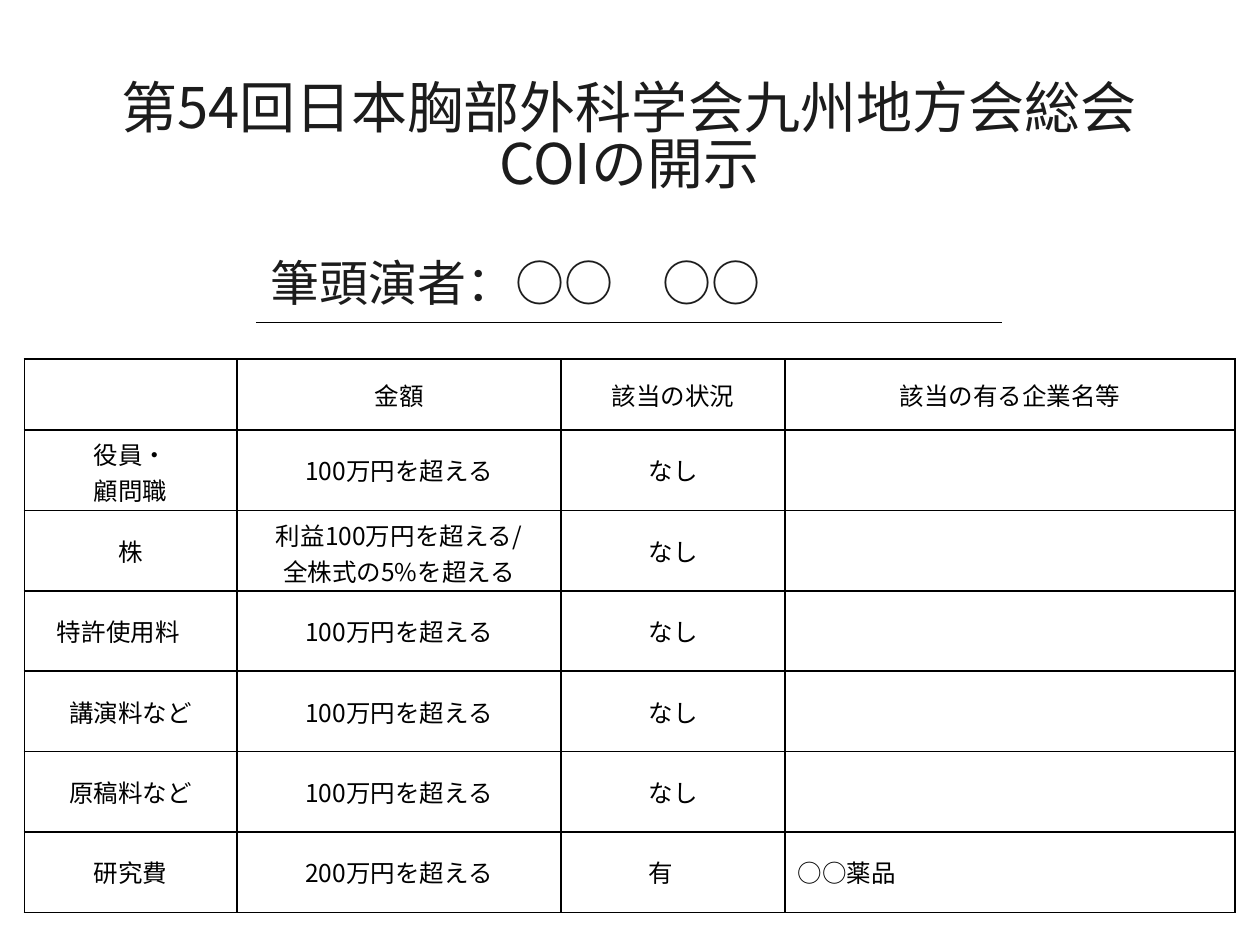
from lxml import etree
from pptx import Presentation
from pptx.dml.color import RGBColor
from pptx.enum.shapes import MSO_CONNECTOR
from pptx.enum.text import MSO_ANCHOR, MSO_AUTO_SIZE, PP_ALIGN
from pptx.oxml.ns import qn
from pptx.util import Cm, Pt

FONT = "Noto Sans CJK JP"
BLACK = RGBColor(0x00, 0x00, 0x00)
INK = RGBColor(0x1C, 0x1C, 0x1C)


def write_text(frame, text, size=14, color=BLACK, align=PP_ALIGN.CENTER, spacing=None, before=0):
    """Fill a text frame: a newline starts a paragraph, a vertical tab breaks a line."""
    frame.text = text
    frame.word_wrap = True
    frame.vertical_anchor = MSO_ANCHOR.MIDDLE
    for paragraph in frame.paragraphs:
        paragraph.alignment = align
        paragraph.space_before = Pt(before)
        if spacing:
            paragraph.line_spacing = spacing
        for run in paragraph.runs:
            run.font.size = Pt(size)
            run.font.name = FONT
            run.font.color.rgb = color
            east_asian = etree.SubElement(run.font._element, qn("a:ea"))
            east_asian.set("typeface", FONT)


def draw_borders(cell):
    properties = cell._tc.get_or_add_tcPr()
    for position, side in enumerate(("a:lnL", "a:lnR", "a:lnT", "a:lnB")):
        border = etree.Element(qn(side), w=str(Pt(1)))
        fill = etree.SubElement(border, qn("a:solidFill"))
        etree.SubElement(fill, qn("a:srgbClr"), val=str(BLACK))
        properties.insert(position, border)


presentation = Presentation()
presentation.slide_width = Cm(25.4)
presentation.slide_height = Cm(19.05)
slide = presentation.slides.add_slide(presentation.slide_layouts[5])

# Title
title = slide.shapes.title
title.left, title.top, title.width, title.height = Cm(1.24), Cm(1.22), Cm(22.89), Cm(3)
write_text(title.text_frame, "第54回日本胸部外科学会九州地方会総会\nCOIの開示",
           size=32, color=INK, spacing=0.83)
title.text_frame.auto_size = MSO_AUTO_SIZE.NONE
title.text_frame.margin_top = Cm(0.33)

# Lead speaker with underline
speaker = slide.shapes.add_textbox(Cm(5.21), Cm(4.95), Cm(15.09), Cm(1.45))
write_text(speaker.text_frame, "筆頭演者：○○　○○", size=28, color=INK, align=PP_ALIGN.LEFT)

underline = slide.shapes.add_connector(
    MSO_CONNECTOR.STRAIGHT, Cm(5.16), Cm(6.5), Cm(20.19), Cm(6.5))
underline.line.color.rgb = BLACK
underline.line.width = Pt(1)
etree.SubElement(underline._element.spPr, qn("a:effectLst"))

# Disclosure table
OVER_1M = "100万円を超える"
ROWS = [
    ("", "金額", "該当の状況", "該当の有る企業名等"),
    ("役員・\v顧問職", OVER_1M, "なし", ""),
    ("株", "利益100万円を超える/\v全株式の5%を超える", "なし", ""),
    ("特許使用料　", OVER_1M, "なし", ""),
    ("講演料など", OVER_1M, "なし", ""),
    ("原稿料など", OVER_1M, "なし", ""),
    ("研究費", "200万円を超える", "有　", "○○薬品"),
]
COLUMN_WIDTHS = (4.29, 6.53, 4.52, 9.07)
HEADER_HEIGHT, ROW_HEIGHT = 1.43, 1.62

table = slide.shapes.add_table(
    len(ROWS), len(COLUMN_WIDTHS), Cm(0.49), Cm(7.24),
    Cm(sum(COLUMN_WIDTHS)), Cm(HEADER_HEIGHT + ROW_HEIGHT * (len(ROWS) - 1))).table
table.first_row = False
table.horz_banding = False
for column, width in zip(table.columns, COLUMN_WIDTHS):
    column.width = Cm(width)

for row_index, values in enumerate(ROWS):
    table.rows[row_index].height = Cm(ROW_HEIGHT if row_index else HEADER_HEIGHT)
    for column_index, value in enumerate(values):
        cell = table.cell(row_index, column_index)
        cell.fill.background()
        cell.vertical_anchor = MSO_ANCHOR.MIDDLE
        draw_borders(cell)
        is_company = row_index > 0 and column_index == 3
        if value:
            write_text(cell.text_frame, value,
                       align=PP_ALIGN.LEFT if is_company else PP_ALIGN.CENTER,
                       before=2.8 if is_company else 0)

presentation.save("out.pptx")
